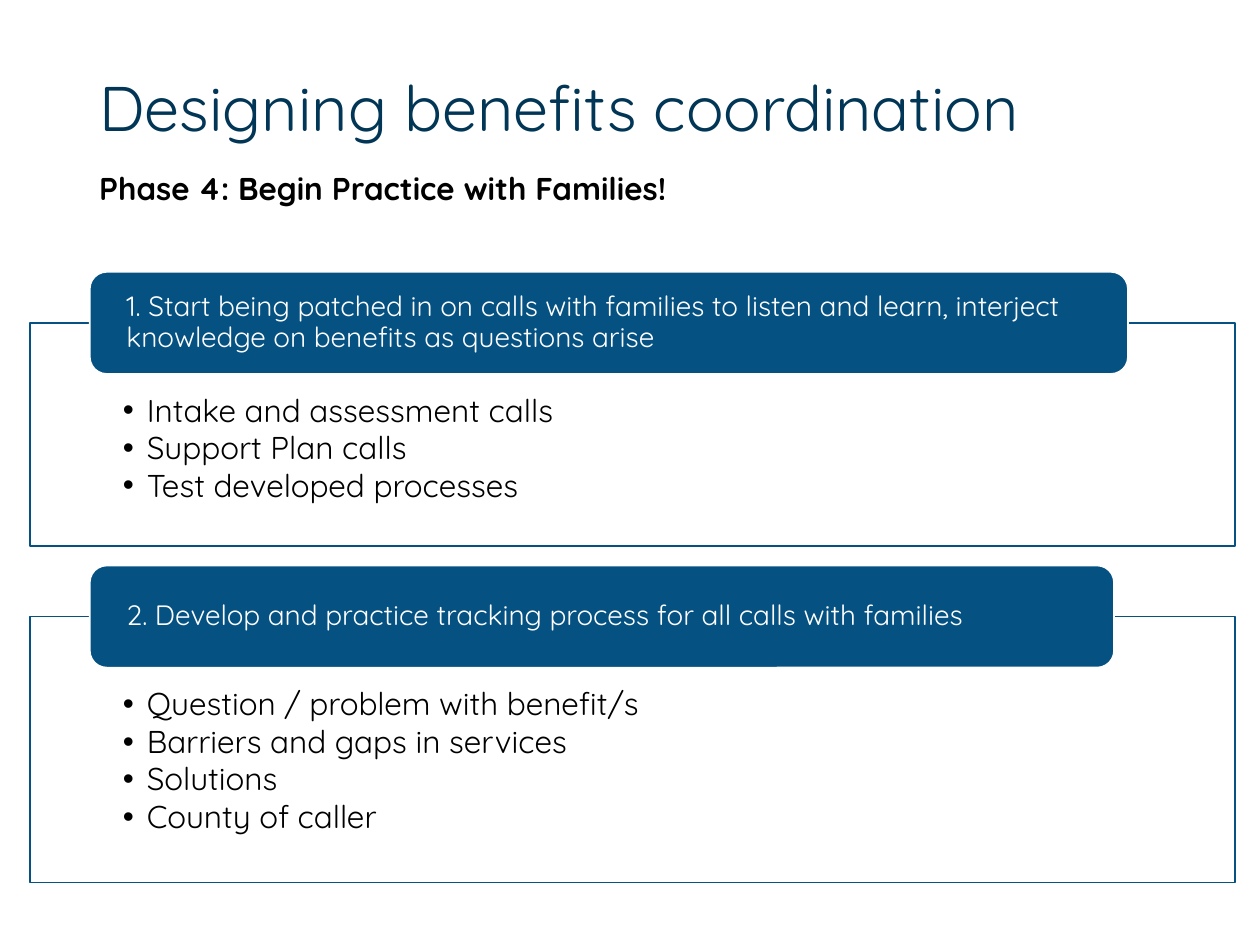
import pptx
import pptx.dml.color
import pptx.enum.shapes
import pptx.enum.text
import pptx.oxml.ns
import pptx.util
from lxml import etree

Cm = pptx.util.Cm
Pt = pptx.util.Pt
RGBColor = pptx.dml.color.RGBColor
Shapes = pptx.enum.shapes.MSO_SHAPE
Anchor = pptx.enum.text.MSO_ANCHOR

NAVY = RGBColor(0x02, 0x36, 0x56)
BLUE = RGBColor(0x04, 0x51, 0x82)
WHITE = RGBColor(0xFF, 0xFF, 0xFF)
BLACK = RGBColor(0x00, 0x00, 0x00)

FONT = "Quicksand"
HEADER_HEIGHT = 2.06
PANEL_OFFSET = 1.03
SECTION_GAP = 0.39
SECTIONS = [
    (
        "1. Start being patched in on calls with families to listen and learn, "
        "interject knowledge on benefits as questions arise",
        20.93,
        4.5,
        ["Intake and assessment calls", "Support Plan calls", "Test developed processes"],
    ),
    (
        "2. Develop and practice tracking process for all calls with families",
        20.65,
        5.36,
        [
            "Question / problem with benefit/s",
            "Barriers and gaps in services",
            "Solutions",
            "County of caller",
        ],
    ),
]


class SlideBuilder:
    def __init__(self, slide, font_name):
        self.slide = slide
        self.font_name = font_name

    def set_text(self, shape, lines, size, color, bold=False, bulleted=False,
                 spacing=0.9, anchor=Anchor.TOP, insets=(0.25, 0.13, 0.25, 0.13)):
        frame = shape.text_frame
        frame.word_wrap = True
        frame.vertical_anchor = anchor
        (frame.margin_left, frame.margin_top,
         frame.margin_right, frame.margin_bottom) = map(Cm, insets)
        for index, line in enumerate(lines):
            paragraph = frame.add_paragraph() if index else frame.paragraphs[0]
            paragraph.text = line
            paragraph.alignment = pptx.enum.text.PP_ALIGN.LEFT
            paragraph.line_spacing = spacing
            if bulleted:
                paragraph.space_after = Pt(2)
                self.add_bullet(paragraph)
            paragraph.font.name = self.font_name
            paragraph.font.size = Pt(size)
            paragraph.font.bold = bold
            paragraph.font.color.rgb = color

    def add_bullet(self, paragraph):
        properties = paragraph._p.get_or_add_pPr()
        properties.set("marL", str(Cm(0.48)))
        properties.set("indent", str(Cm(-0.48)))
        qualified = pptx.oxml.ns.qn
        etree.SubElement(properties, qualified("a:buFont"), typeface="Arial")
        etree.SubElement(properties, qualified("a:buChar"), char="•")

    def add_text(self, left, top, width, height, text, size, color, **style):
        shape = self.slide.shapes.add_textbox(Cm(left), Cm(top), Cm(width), Cm(height))
        self.set_text(shape, [text], size, color, **style)

    def add_box(self, kind, left, top, width, height, fill, line):
        shape = self.slide.shapes.add_shape(kind, Cm(left), Cm(top), Cm(width), Cm(height))
        shape.shadow.inherit = False
        shape.fill.solid()
        shape.fill.fore_color.rgb = fill
        shape.line.color.rgb = line
        shape.line.width = Pt(1)
        return shape

    def add_panel(self, top, height, items):
        panel = self.add_box(Shapes.RECTANGLE, 0.6, top, 24.3, height, WHITE, BLUE)
        self.set_text(panel, items, 18, BLACK, bulleted=True, insets=(1.88, 1.45, 1.88, 0.36))

    def add_header(self, top, width, text):
        header = self.add_box(
            Shapes.ROUNDED_RECTANGLE, 1.81, top, width, HEADER_HEIGHT, BLUE, WHITE)
        self.set_text(header, [text], 16, WHITE, anchor=Anchor.MIDDLE, insets=(0.64, 0, 0.64, 0))


def main():
    presentation = pptx.Presentation()
    presentation.slide_width = Cm(25.4)
    presentation.slide_height = Cm(19.05)
    slide = presentation.slides.add_slide(presentation.slide_layouts[6])
    builder = SlideBuilder(slide, FONT)

    builder.add_text(1.75, 1.42, 23.65, 3.68, "Designing benefits coordination", 36, NAVY)
    builder.add_text(1.75, 3.28, 13.13, 1.02, "Phase 4: Begin Practice with Families!",
                     18, BLACK, bold=True, spacing=1.0)

    top = 5.48
    for heading, header_width, panel_height, items in SECTIONS:
        panel_top = top + PANEL_OFFSET
        builder.add_panel(panel_top, panel_height, items)
        builder.add_header(top, header_width, heading)
        top = panel_top + panel_height + SECTION_GAP

    presentation.save("out.pptx")


if __name__ == "__main__":
    main()
